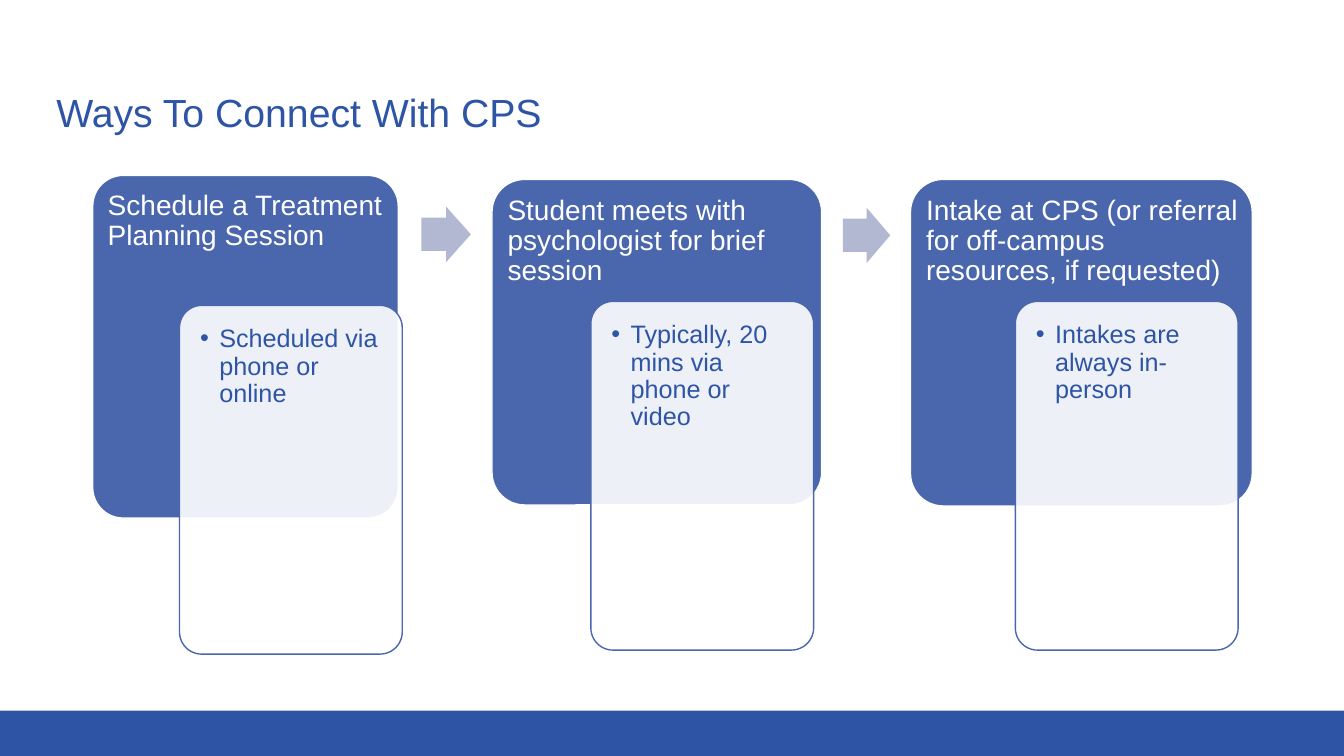
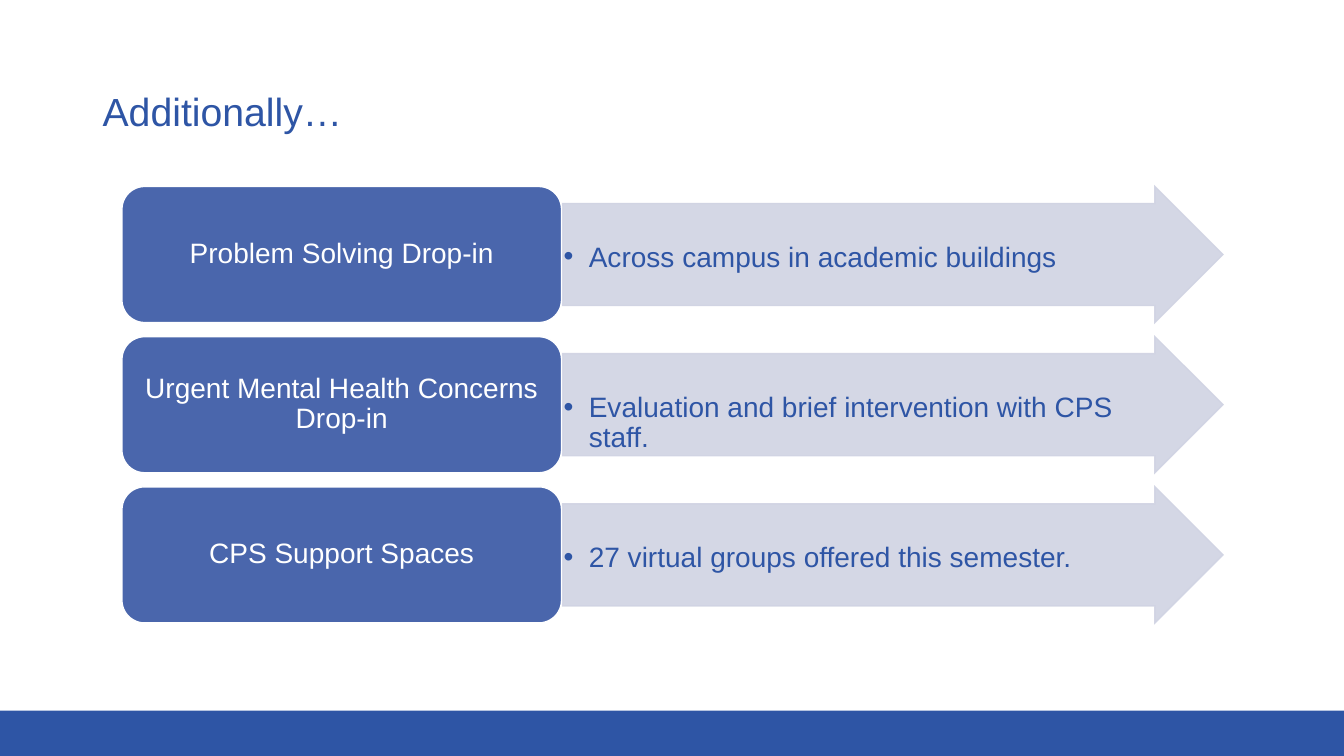
"""Build two slides on the ways students can connect with CPS."""
from lxml.etree import SubElement
from pptx import Presentation
from pptx.dml.color import RGBColor
from pptx.enum.shapes import MSO_SHAPE as Shape
from pptx.enum.text import MSO_ANCHOR as Anchor, PP_ALIGN as Align
from pptx.oxml.ns import qn
from pptx.util import Inches, Pt

BLUE = RGBColor(0x2E, 0x55, 0xA5)
CARD_BLUE = RGBColor(0x4A, 0x66, 0xAC)
ARROW_GREY = RGBColor(0xB2, 0xB8, 0xD2)
PALE = RGBColor(0xD0, 0xD3, 0xE3)
WHITE = RGBColor(0xFF, 0xFF, 0xFF)
FONT = "Arial"

STEPS = [
    ((0.92, 1.74, 3.03, 3.4), (1.78, 3.03),
     "Schedule a Treatment Planning Session", "Scheduled via phone or online"),
    ((4.88, 1.78, 3.27, 3.23), (5.86, 2.99),
     "Student meets with psychologist for brief session",
     "Typically, 20 mins via phone or video"),
    ((9.03, 1.78, 3.39, 3.24), (10.07, 2.99),
     "Intake at CPS (or referral for off-campus resources, if requested)",
     "Intakes are always in-person"),
]
STEP_ARROWS = [(4.18, 2.05, 0.49, 0.55), (8.36, 2.06, 0.47, 0.55)]
SERVICES = [
    ("Problem Solving Drop-in", "Across campus in academic buildings"),
    ("Urgent Mental Health Concerns Drop-in",
     "Evaluation and brief intervention with CPS staff."),
    ("CPS Support Spaces", "27 virtual groups offered this semester."),
]


def set_alpha(block, color, percent):
    for used in block.element.spPr.iter(qn("a:srgbClr")):
        if used.get("val") == str(color):
            SubElement(used, qn("a:alpha"), val=str(percent * 1000))


def add_block(slide, kind, box, fill, line=None, adjust=(), alpha=None):
    block = slide.shapes.add_shape(kind, *map(Inches, box))
    block.shadow.inherit = False
    for index, value in enumerate(adjust):
        block.adjustments[index] = value
    block.fill.solid()
    block.fill.fore_color.rgb = fill
    if line is None:
        block.line.fill.background()
    else:
        block.line.color.rgb = line
        block.line.width = Pt(1)
        outline = block.element.spPr.find(qn("a:ln"))
        SubElement(outline, qn("a:miter"), lim="800000")
    if alpha:
        set_alpha(block, fill, alpha)
    return block


def write(shape, text, size, color, insets, anchor=Anchor.TOP,
          align=Align.LEFT, bullet_indent=None):
    frame = shape.text_frame
    frame.word_wrap = True
    frame.vertical_anchor = anchor
    (frame.margin_left, frame.margin_top,
     frame.margin_right, frame.margin_bottom) = map(Inches, insets)
    paragraph = frame.paragraphs[0]
    paragraph.alignment = align
    paragraph.line_spacing = 0.9
    if bullet_indent:
        properties = paragraph._p.get_or_add_pPr()
        properties.set("marL", str(Inches(bullet_indent)))
        properties.set("indent", str(-Inches(bullet_indent)))
        SubElement(properties, qn("a:buFont"), typeface=FONT)
        SubElement(properties, qn("a:buChar"), char="•")
    run = paragraph.add_run()
    run.text = text
    run.font.name = FONT
    run.font.size = Pt(size)
    run.font.color.rgb = color


def add_titled_slide(prs, title, left, top, width):
    slide = prs.slides.add_slide(prs.slide_layouts[6])
    add_block(slide, Shape.RECTANGLE, (-0.01, 7.05, 13.36, 0.47), BLUE)
    heading = slide.shapes.add_textbox(*map(Inches, (left, top, width, 1.45)))
    write(heading, title, 28, BLUE, (0.1, 0.05, 0.1, 0.05), Anchor.MIDDLE)
    return slide


def add_step(slide, card_box, detail_corner, heading, detail):
    card = add_block(slide, Shape.ROUNDED_RECTANGLE, card_box,
                     CARD_BLUE, WHITE, (0.1,))
    write(card, heading, 20, WHITE, (0.06, 0.07, 0.03, 0.08))
    panel = add_block(slide, Shape.ROUNDED_RECTANGLE,
                      (*detail_corner, 2.21, 3.46),
                      WHITE, CARD_BLUE, (0.1,), alpha=90)
    write(panel, detail, 18, BLUE, (0.14,) * 4, bullet_indent=0.19)


def add_service(slide, top, name, detail):
    arrow = add_block(slide, Shape.RIGHT_ARROW, (5.58, top, 6.55, 1.35),
                      PALE, PALE, (0.75, 0.5), alpha=90)
    write(arrow, detail, 20, BLUE, (0.01, 0.39, 0.01, 0.01),
          bullet_indent=0.25)
    label = add_block(slide, Shape.ROUNDED_RECTANGLE,
                      (1.21, top, 4.36, 1.35), CARD_BLUE, WHITE)
    write(label, name, 20, WHITE, (0.08, 0.04, 0.08, 0.04),
          Anchor.MIDDLE, Align.CENTER)


def main():
    prs = Presentation()
    prs.slide_width, prs.slide_height = Inches(13.33), Inches(7.5)

    connect = add_titled_slide(prs, "Ways To Connect With CPS",
                               0.46, 0.41, 12.32)
    for step in STEPS:
        add_step(connect, *step)
    for arrow_box in STEP_ARROWS:
        add_block(connect, Shape.RIGHT_ARROW, arrow_box, ARROW_GREY,
                  adjust=(0.6, 0.5))

    additional = add_titled_slide(prs, "Additionally…", 0.92, 0.4, 11.5)
    for row, (name, detail) in enumerate(SERVICES):
        add_service(additional, 1.85 + row * 1.49, name, detail)

    prs.save("out.pptx")


if __name__ == "__main__":
    main()
